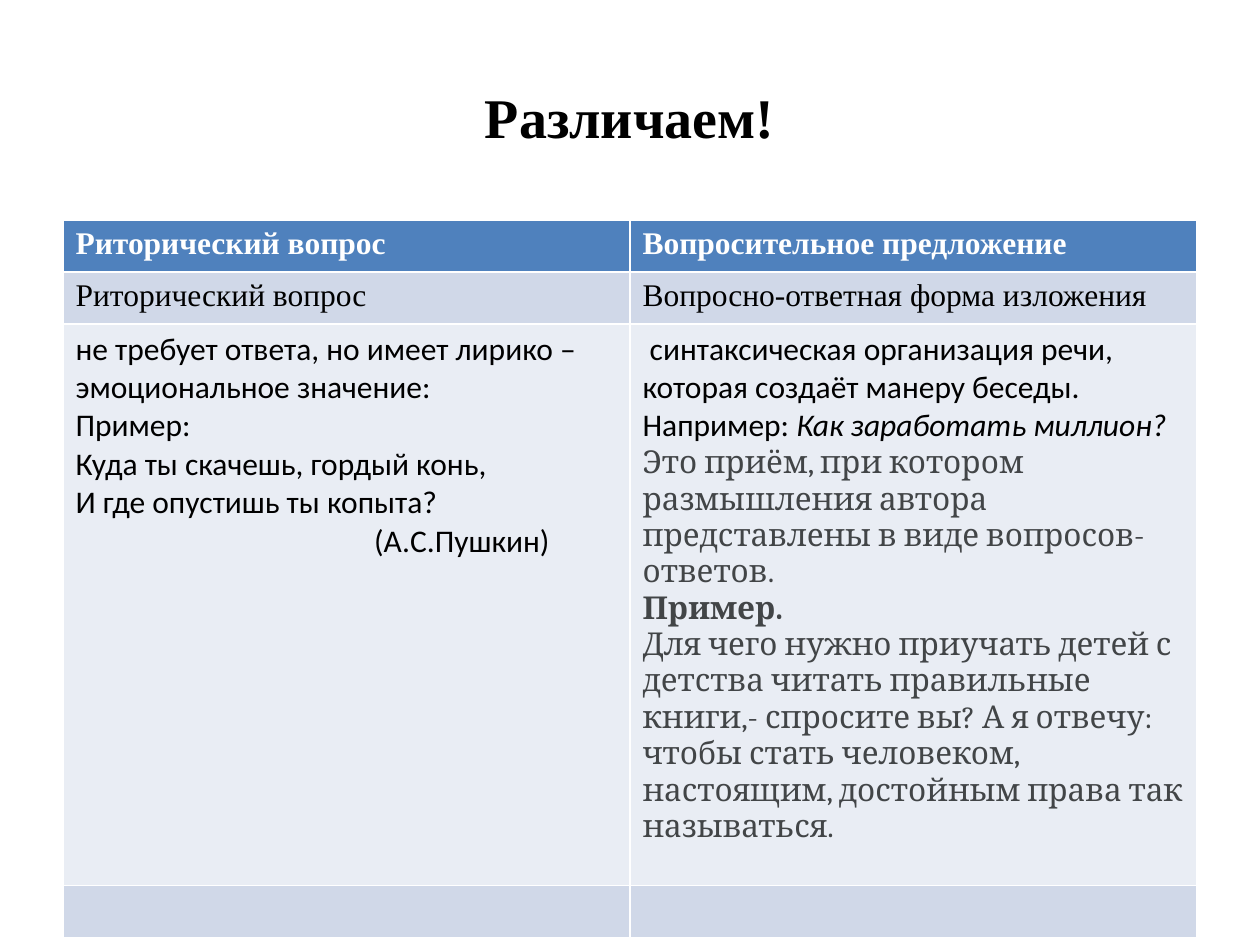
"""Build a slide that contrasts rhetorical questions with question-and-answer form."""
from pptx import Presentation
from pptx.dml.color import RGBColor as Rgb
from pptx.enum.text import MSO_ANCHOR as Anchor, PP_ALIGN as Align
from pptx.util import Inches, Pt

HUES = {
    "black": "000000", "white": "FFFFFF", "gray": "424547",
    "head": "4F81BD", "band": "D0D8E8", "pale": "E9EDF4",
}
FORMS = {
    "title": {"name": "Times New Roman", "size": Pt(32), "bold": True, "hue": "black"},
    "head": {"name": "Times New Roman", "size": Pt(18), "bold": True, "hue": "white"},
    "sub": {"name": "Times New Roman", "size": Pt(18), "bold": False, "hue": "black"},
    "body": {"name": "Calibri", "size": Pt(18), "bold": False, "hue": "black"},
    "quote": {"name": "Calibri", "size": Pt(18), "bold": False, "italic": True, "hue": "black"},
    "note": {"name": "Cambria", "size": Pt(18), "bold": False, "hue": "gray"},
    "label": {"name": "Cambria", "size": Pt(18), "bold": True, "hue": "gray"},
}
TITLE = [[("Различаем!", "title")]]
POEM = [
    [("не требует ответа, но имеет лирико – эмоциональное значение:", "body")],
    [("Пример:", "body")],
    [("Куда ты скачешь, гордый конь,", "body")],
    [("И где опустишь ты копыта?", "body")],
    [("(А.С.Пушкин)", "body")],
]
SPEECH = [
    [(" синтаксическая организация речи, которая создаёт манеру беседы. Например: ", "body"),
     ("Как заработать миллион?", "quote")],
    [("Это приём, при котором размышления автора представлены в виде вопросов-ответов.", "note")],
    [("Пример.", "label")],
    [("Для чего нужно приучать детей с детства читать правильные книги,- спросите вы? "
      "А я отвечу: чтобы стать человеком, настоящим, достойным права так называться.", "note")],
]
ROWS = [
    (0.41, "head", [[[("Риторический вопрос", "head")]],
                    [[("Вопросительное предложение", "head")]]]),
    (0.41, "band", [[[("Риторический вопрос", "sub")]],
                    [[("Вопросно-ответная форма изложения", "sub")]]]),
    (4.46, "pale", [POEM, SPEECH]),
    (0.41, "band", [[], []]),
]
LEFT, WIDTH, COLS = 0.5, 9, 2


def write(frame, paras):
    for i, runs in enumerate(paras):
        para = frame.paragraphs[0] if i == 0 else frame.add_paragraph()
        for text, form in runs:
            run = para.add_run()
            run.text = text
            for key, val in FORMS[form].items():
                if key == "hue":
                    run.font.color.rgb = Rgb.from_string(HUES[val])
                else:
                    setattr(run.font, key, val)


def add_title(slide):
    box = slide.shapes.add_textbox(Inches(LEFT), Inches(0.3), Inches(WIDTH), Inches(1.25))
    frame = box.text_frame
    frame.word_wrap = True
    frame.vertical_anchor = Anchor.MIDDLE
    write(frame, TITLE)
    frame.paragraphs[0].alignment = Align.CENTER


def add_grid(slide):
    high = sum(row[0] for row in ROWS)
    grid = slide.shapes.add_table(len(ROWS), COLS, Inches(LEFT), Inches(1.75),
                                  Inches(WIDTH), Inches(high)).table
    for col in grid.columns:
        col.width = Inches(WIDTH / COLS)
    for r, (tall, fill, cells) in enumerate(ROWS):
        grid.rows[r].height = Inches(tall)
        for c, paras in enumerate(cells):
            cell = grid.cell(r, c)
            cell.fill.solid()
            cell.fill.fore_color.rgb = Rgb.from_string(HUES[fill])
            write(cell.text_frame, paras)
    poet = grid.cell(2, 0).text_frame.paragraphs[-1]
    poet._p.get_or_add_pPr().set("marL", str(Inches(2.37)))


def main():
    deck = Presentation()
    deck.slide_width, deck.slide_height = Inches(10), Inches(7.5)
    slide = deck.slides.add_slide(deck.slide_layouts[6])
    add_title(slide)
    add_grid(slide)
    deck.save("out.pptx")


if __name__ == "__main__":
    main()
